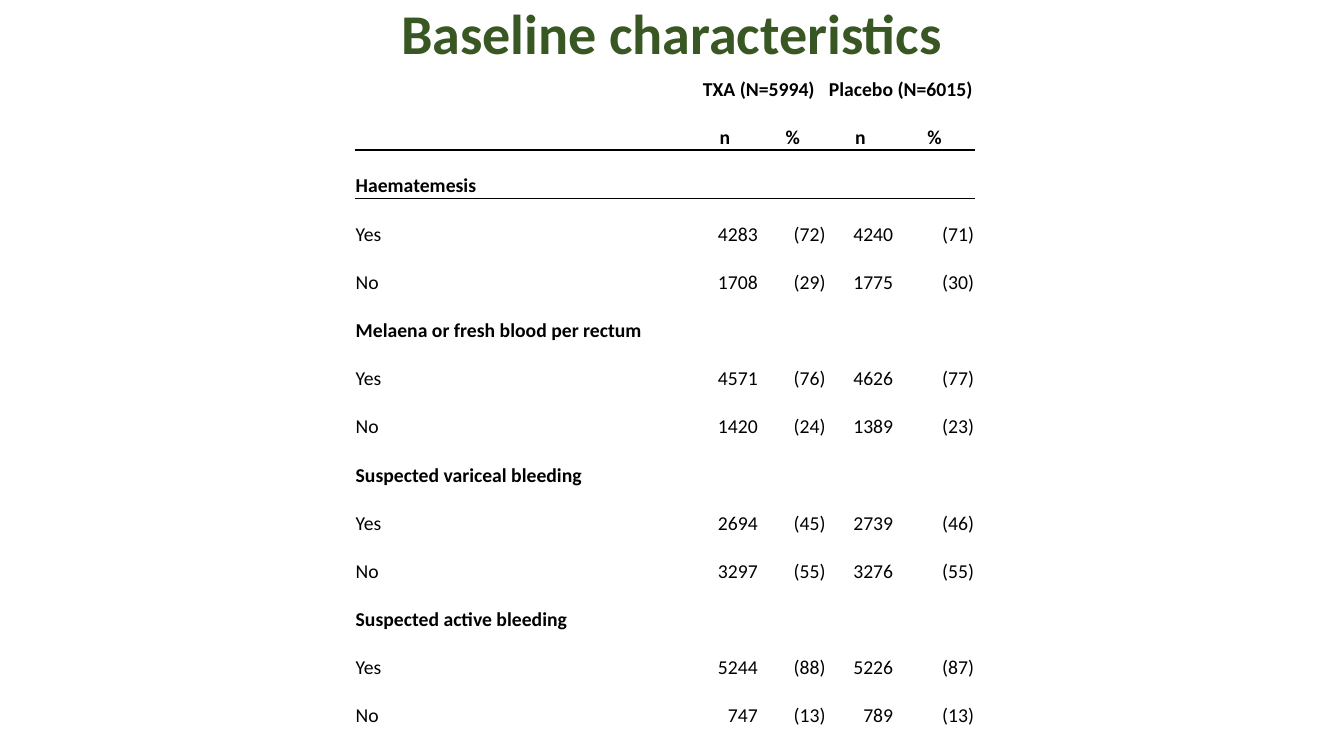
from dataclasses import dataclass

import pptx
import pptx.dml.color
import pptx.enum.text
import pptx.oxml
import pptx.oxml.ns
import pptx.util

Inches = pptx.util.Inches
Pt = pptx.util.Pt
ALIGN = pptx.enum.text.PP_ALIGN
ANCHOR = pptx.enum.text.MSO_ANCHOR

FONT = "Calibri"
BLACK = "000000"
GREEN = "385723"
NO_GRID_STYLE = "{2D5ABB26-0587-4C30-8999-92F81FD0307C}"
COLUMN_WIDTHS = [3.33, 0.67, 0.67, 0.67, 0.8]
TABLE_HEIGHT = 6.68


@dataclass
class Row:
    texts: list[str]
    align: ALIGN = ALIGN.RIGHT
    bold: bool = False
    merges: tuple[tuple[int, int], ...] = ()
    underline: bool = False


@dataclass
class Characteristic:
    name: str
    yes: list[str]
    no: list[str]
    underline: bool = False

    def rows(self) -> list[Row]:
        return [
            Row([self.name], bold=True, merges=((0, 4),), underline=self.underline),
            Row(["Yes", *self.yes]),
            Row(["No", *self.no]),
        ]


HEADERS = [
    Row(["", "TXA (N=5994)", "", "Placebo (N=6015)", ""], ALIGN.CENTER, True, ((1, 2), (3, 4))),
    Row(["", "n", "%", "n", "%"], ALIGN.CENTER, True, underline=True),
]
CHARACTERISTICS = [
    Characteristic("Haematemesis", ["4283", "(72)", "4240", "(71)"],
                   ["1708", "(29)", "1775", "(30)"], underline=True),
    Characteristic("Melaena or fresh blood per rectum", ["4571", "(76)", "4626", "(77)"],
                   ["1420", "(24)", "1389", "(23)"]),
    Characteristic("Suspected variceal bleeding", ["2694", "(45)", "2739", "(46)"],
                   ["3297", "(55)", "3276", "(55)"]),
    Characteristic("Suspected active bleeding", ["5244", "(88)", "5226", "(87)"],
                   ["747", "(13)", "789", "(13)"]),
]


def color(value: str) -> pptx.dml.color.RGBColor:
    return pptx.dml.color.RGBColor.from_string(value)


def style_paragraph(p, size: float, fill: str, bold: bool, align: ALIGN) -> None:
    p.alignment = align
    p.font.name = FONT
    p.font.size = Pt(size)
    p.font.bold = bold
    p.font.color.rgb = color(fill)


def add_title(s, text: str) -> None:
    sp = s.shapes.add_textbox(Inches(0.91), Inches(0), Inches(11.47), Inches(0.71))
    tf = sp.text_frame
    tf.word_wrap = True
    tf.vertical_anchor = ANCHOR.MIDDLE
    p = tf.paragraphs[0]
    p.text = text
    p.line_spacing = 0.9
    style_paragraph(p, 40, GREEN, True, ALIGN.CENTER)


def underline_cell(cell) -> None:
    line = pptx.oxml.parse_xml(
        f'<a:lnB {pptx.oxml.ns.nsdecls("a")} w="{Pt(1)}"><a:solidFill>'
        f'<a:srgbClr val="{BLACK}"/></a:solidFill></a:lnB>'
    )
    cell._tc.get_or_add_tcPr().insert(0, line)


def fill_row(table, index: int, row: Row) -> None:
    for first, last in row.merges:
        table.cell(index, first).merge(table.cell(index, last))
    for column in range(len(COLUMN_WIDTHS)):
        cell = table.cell(index, column)
        cell.margin_left = cell.margin_right = cell.margin_top = Inches(0.01)
        cell.margin_bottom = 0
        cell.vertical_anchor = ANCHOR.BOTTOM
        cell.fill.background()
        if row.underline:
            underline_cell(cell)
        p = cell.text_frame.paragraphs[0]
        if column < len(row.texts) and row.texts[column]:
            p.text = row.texts[column]
        style_paragraph(p, 14, BLACK, row.bold, row.align if column else ALIGN.LEFT)


def add_baseline_table(s, rows: list[Row]) -> None:
    frame = s.shapes.add_table(
        len(rows), len(COLUMN_WIDTHS), Inches(3.51), Inches(0.53),
        Inches(sum(COLUMN_WIDTHS)), Inches(TABLE_HEIGHT),
    )
    table = frame.table
    table.first_row = table.horz_banding = False
    table._tbl.tblPr.find(pptx.oxml.ns.qn("a:tableStyleId")).text = NO_GRID_STYLE
    for column, width in zip(table.columns, COLUMN_WIDTHS):
        column.width = Inches(width)
    for index, row in enumerate(rows):
        table.rows[index].height = Inches(TABLE_HEIGHT / len(rows))
        fill_row(table, index, row)


def main() -> None:
    prs = pptx.Presentation()
    prs.slide_width = Inches(13.3)
    prs.slide_height = Inches(7.48)
    s = prs.slides.add_slide(prs.slide_layouts[6])
    add_baseline_table(s, HEADERS + [row for item in CHARACTERISTICS for row in item.rows()])
    add_title(s, "Baseline characteristics")
    prs.save("out.pptx")


if __name__ == "__main__":
    main()
